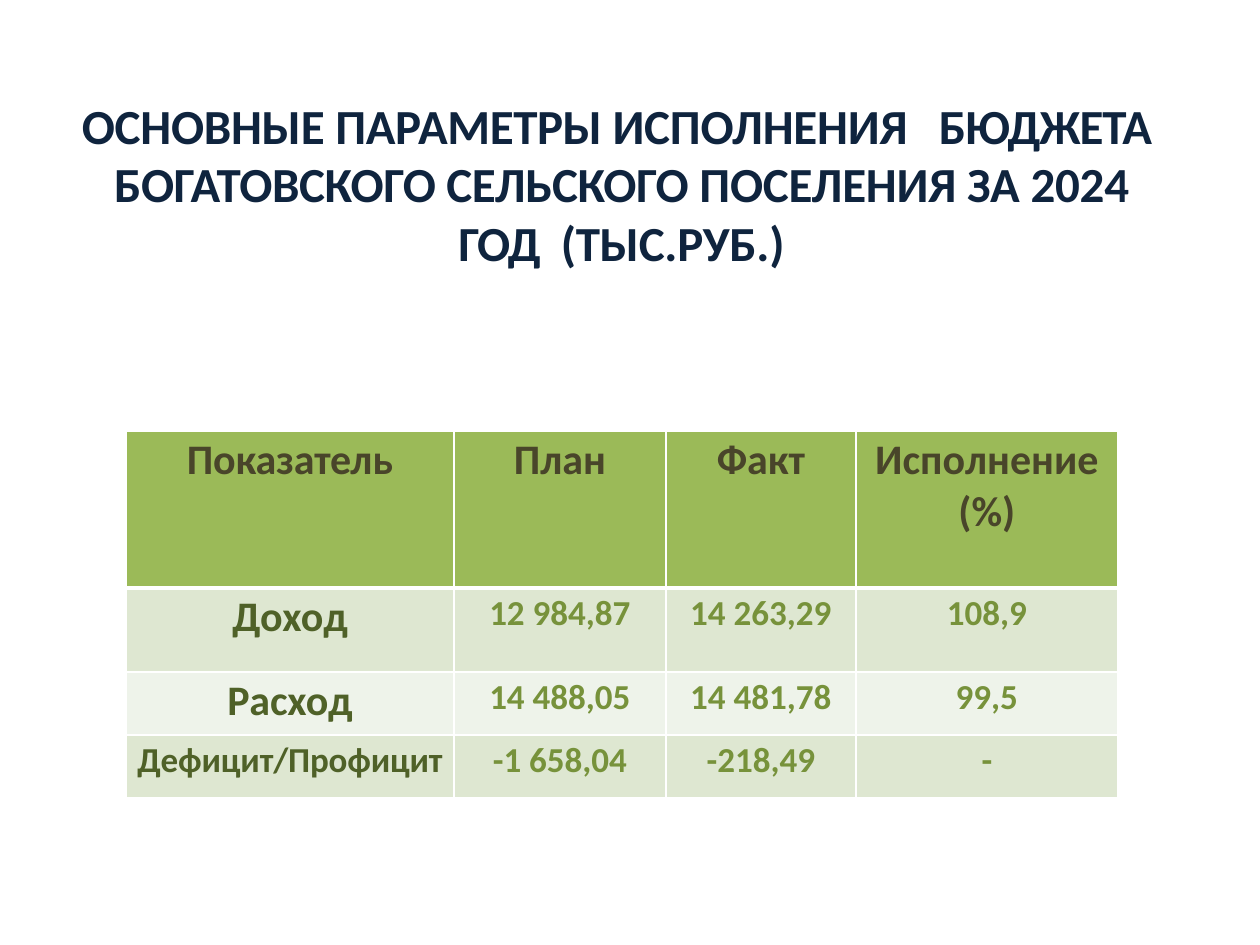
import dataclasses

import lxml.etree
import pptx
import pptx.dml.color
import pptx.enum.text
import pptx.oxml.ns
import pptx.util

EMU_PER_PX = 914400 // 126


@dataclasses.dataclass(frozen=True)
class Theme:
    font: str = "Calibri"
    title_color: str = "0F243E"
    header_color: str = "49452A"
    label_color: str = "4F6128"
    value_color: str = "77923B"
    border_color: str = "FFFFFF"
    header_fill: str = "9BBA58"
    band_fills: tuple = ("DEE7D1", "EEF3EA")
    title_size: int = 28
    heading_size: int = 24
    value_size: int = 20


THEME = Theme()

TITLE = [
    ("ОСНОВНЫЕ ", -0.1),
    ("ПАРАМЕТРЫ ", -0.2),
    ("ИСПОЛНЕНИЯ\t", -0.1),
    ("БЮДЖЕТА  ", -0.5),
    ("БОГАТОВСКОГО СЕЛЬСКОГО ", -0.2),
    ("ПОСЕЛЕНИЯ ЗА 2024 ", -0.1),
    ("ГОД  ", -0.6),
    ("(ТЫС.РУБ.)", -0.1),
]
HEADER = ["Показатель", "План", "Факт", "Исполнение\n(%)"]
BODY = [
    ["Доход", "12 984,87", "14 263,29", "108,9"],
    ["Расход", "14 488,05", "14 481,78", "99,5"],
    ["Дефицит/Профицит", "-1 658,04", "-218,49", "-"],
]
COLUMN_WIDTHS = [328, 212, 190, 262]
ROW_HEIGHTS = [157, 84, 63, 63]
# Line widths in points, from the outer edge through the inner lines
VERTICAL_LINES = [0.75, 1, 1, 1, 0.5]
HORIZONTAL_LINES = [0.75, 3, 1, 1, 0.75]


def px(length):
    return pptx.util.Emu(length * EMU_PER_PX)


def rgb(color):
    return pptx.dml.color.RGBColor.from_string(color)


def add_span(para, text, size, color, spacing=0):
    """Add a bold run; spacing between letters is in points."""
    span = para.add_run()
    span.text = text
    span.font.name = THEME.font
    span.font.size = pptx.util.Pt(size)
    span.font.bold = True
    span.font.color.rgb = rgb(color)
    if spacing:
        span.font._element.set("spc", str(round(spacing * 100)))


def set_insets(holder, top):
    holder.margin_left = holder.margin_right = holder.margin_bottom = 0
    holder.margin_top = px(top)


def add_tab_stop(para, position):
    tabs = lxml.etree.SubElement(
        para._p.get_or_add_pPr(), pptx.oxml.ns.qn("a:tabLst"))
    lxml.etree.SubElement(
        tabs, pptx.oxml.ns.qn("a:tab"), pos=str(px(position)), algn="l")


def add_title(page, left, top, width, height):
    box = page.shapes.add_textbox(px(left), px(top), px(width), px(height))
    frame = box.text_frame
    frame.word_wrap = True
    set_insets(frame, 1)
    para = frame.paragraphs[0]
    para.alignment = pptx.enum.text.PP_ALIGN.CENTER
    add_tab_stop(para, 857)
    for text, spacing in TITLE:
        add_span(para, text, THEME.title_size, THEME.title_color, spacing)


def add_border(cell, side, points):
    line = lxml.etree.SubElement(
        cell._tc.get_or_add_tcPr(), pptx.oxml.ns.qn("a:ln" + side),
        w=str(pptx.util.Pt(points)))
    fill = lxml.etree.SubElement(line, pptx.oxml.ns.qn("a:solidFill"))
    lxml.etree.SubElement(
        fill, pptx.oxml.ns.qn("a:srgbClr"), val=THEME.border_color)


def cell_style(row, column):
    """Return the type size, text colour and fill of a cell."""
    if row == 0:
        return THEME.heading_size, THEME.header_color, THEME.header_fill
    fill = THEME.band_fills[(row - 1) % 2]
    if column > 0:
        return THEME.value_size, THEME.value_color, fill
    is_balance = row == len(BODY)
    size = THEME.value_size if is_balance else THEME.heading_size
    return size, THEME.label_color, fill


def fill_cell(cell, text, row, column):
    size, color, fill = cell_style(row, column)
    set_insets(cell, 4)
    add_border(cell, "L", VERTICAL_LINES[column])
    add_border(cell, "R", VERTICAL_LINES[column + 1])
    add_border(cell, "T", HORIZONTAL_LINES[row])
    add_border(cell, "B", HORIZONTAL_LINES[row + 1])
    cell.fill.solid()
    cell.fill.fore_color.rgb = rgb(fill)
    frame = cell.text_frame
    for index, line in enumerate(text.split("\n")):
        para = frame.add_paragraph() if index else frame.paragraphs[0]
        para.alignment = pptx.enum.text.PP_ALIGN.CENTER
        add_span(para, line, size, color, -0.1 if column == 0 else 0)


def add_budget_table(page, left, top):
    rows = [HEADER] + BODY
    table = page.shapes.add_table(
        len(rows), len(HEADER), px(left), px(top),
        px(sum(COLUMN_WIDTHS)), px(sum(ROW_HEIGHTS))).table
    table.horz_banding = False
    for column, width in zip(table.columns, COLUMN_WIDTHS):
        column.width = px(width)
    for row, height in zip(table.rows, ROW_HEIGHTS):
        row.height = px(height)
    for row, texts in enumerate(rows):
        for column, text in enumerate(texts):
            fill_cell(table.cell(row, column), text, row, column)


def main():
    deck = pptx.Presentation()
    deck.slide_width, deck.slide_height = px(1260), px(945)
    page = deck.slides.add_slide(deck.slide_layouts[6])
    add_title(page, 73, 94, 1097, 180)
    add_budget_table(page, 126, 431)
    deck.save("out.pptx")


if __name__ == "__main__":
    main()
